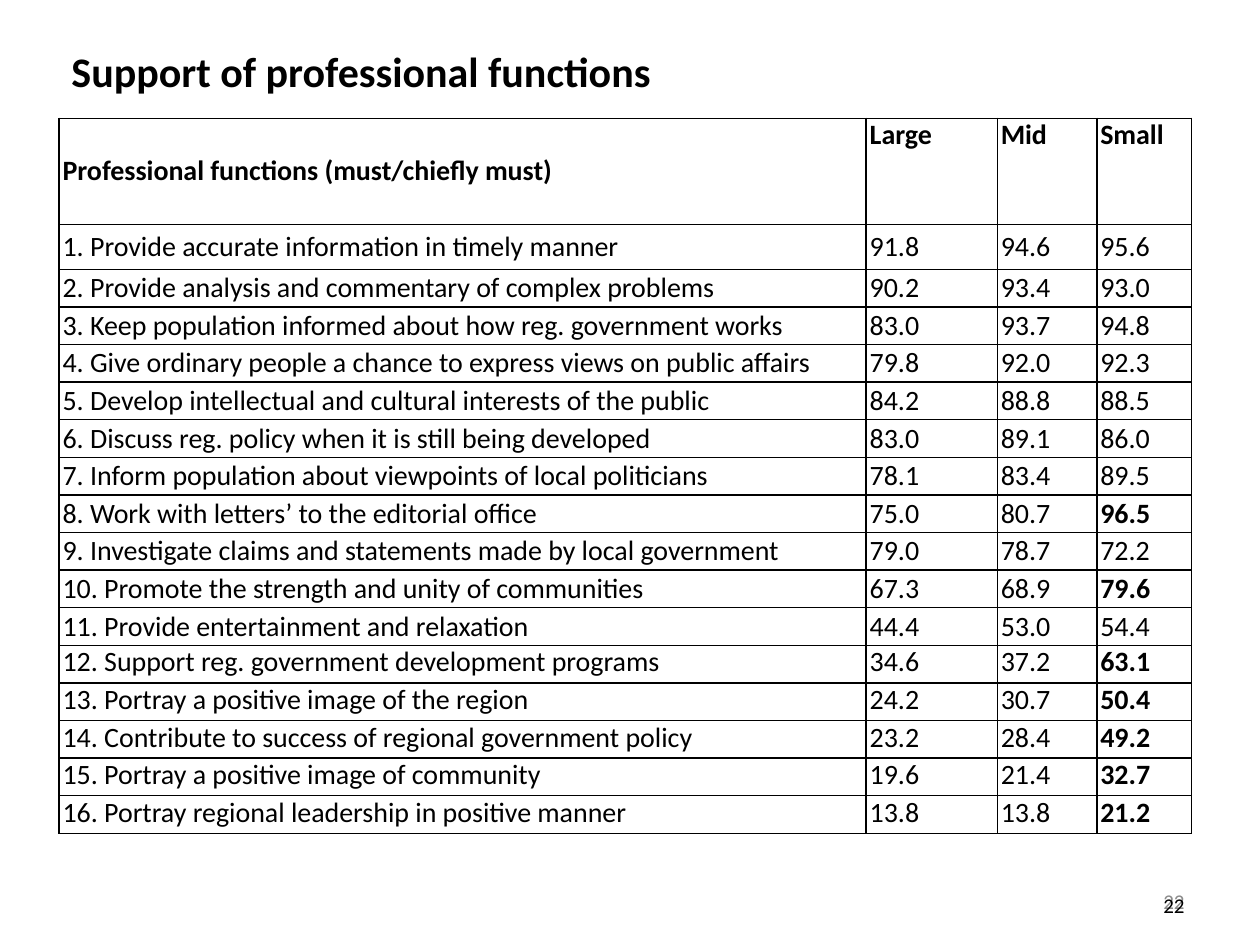
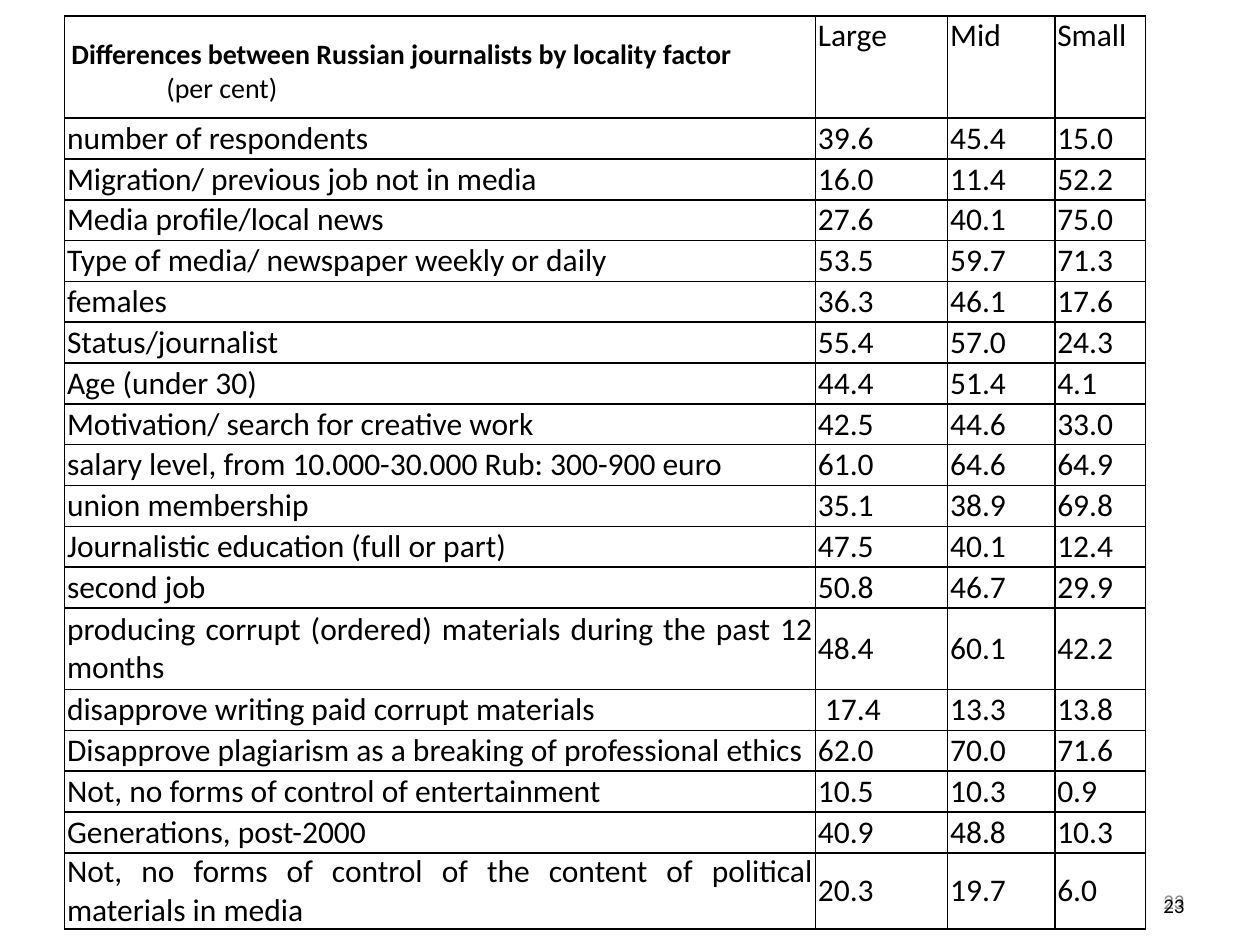
"""Build two slides of tables on Russian journalists by size of locality."""
from lxml import etree
from pptx import Presentation
from pptx.dml.color import RGBColor
from pptx.enum.text import MSO_ANCHOR, PP_ALIGN
from pptx.oxml.ns import qn
from pptx.util import Pt

TOP, MIDDLE, BOTTOM = MSO_ANCHOR.TOP, MSO_ANCHOR.MIDDLE, MSO_ANCHOR.BOTTOM
LEFT, RIGHT, JUSTIFY = PP_ALIGN.LEFT, PP_ALIGN.RIGHT, PP_ALIGN.JUSTIFY
BLACK = RGBColor(0x00, 0x00, 0x00)
GREY = RGBColor(0x8C, 0x8C, 0x8C)
FONT = "Calibri"
BLANK_LAYOUT = 6
BORDER_WIDTH = Pt(1)
BORDER_SIDES = ("a:lnL", "a:lnR", "a:lnT", "a:lnB")

LOCALITIES = ("Large", "Mid", "Small")

FUNCTIONS_TITLE = "Support of professional functions"
FUNCTIONS_HEADER = "Professional functions (must/chiefly must)"
FUNCTIONS = [
    ("Provide accurate information in timely manner", "91.8", "94.6", "95.6"),
    ("Provide analysis and commentary of complex problems", "90.2", "93.4", "93.0"),
    ("Keep population informed about how reg. government works", "83.0", "93.7", "94.8"),
    ("Give ordinary people a chance to express views on public affairs", "79.8", "92.0", "92.3"),
    ("Develop intellectual and cultural interests of the public", "84.2", "88.8", "88.5"),
    ("Discuss reg. policy when it is still being developed", "83.0", "89.1", "86.0"),
    ("Inform population about viewpoints of local politicians", "78.1", "83.4", "89.5"),
    ("Work with letters’ to the editorial office", "75.0", "80.7", "96.5"),
    ("Investigate claims and statements made by local government", "79.0", "78.7", "72.2"),
    ("Promote the strength and unity of communities", "67.3", "68.9", "79.6"),
    ("Provide entertainment and relaxation", "44.4", "53.0", "54.4"),
    ("Support reg. government development programs", "34.6", "37.2", "63.1"),
    ("Portray a positive image of the region", "24.2", "30.7", "50.4"),
    ("Contribute to success of regional government policy", "23.2", "28.4", "49.2"),
    ("Portray a positive image of community", "19.6", "21.4", "32.7"),
    ("Portray regional leadership in positive manner", "13.8", "13.8", "21.2"),
]
STRONG_IN_SMALL = {8, 10, 12, 13, 14, 15, 16}
FIRST_TOP_ALIGNED = 12

DIFFERENCES_TITLE = "Differences between Russian journalists by locality factor"
DIFFERENCES_UNIT = "(per cent)"
DIFFERENCES = [
    ("number of respondents", "39.6", "45.4", "15.0"),
    ("Migration/ previous job not in media", "16.0", "11.4", "52.2"),
    ("Media profile/local news", "27.6", "40.1", "75.0"),
    ("Type of media/ newspaper weekly or daily", "53.5", "59.7", "71.3"),
    ("females", "36.3", "46.1", "17.6"),
    ("Status/journalist", "55.4", "57.0", "24.3"),
    ("Age (under 30)", "44.4", "51.4", "4.1"),
    ("Motivation/ search for creative work", "42.5", "44.6", "33.0"),
    ("salary level, from 10.000-30.000 Rub: 300-900 euro", "61.0", "64.6", "64.9"),
    ("union membership", "35.1", "38.9", "69.8"),
    ("Journalistic education (full or part)", "47.5", "40.1", "12.4"),
    ("second job", "50.8", "46.7", "29.9"),
    ("producing corrupt (ordered) materials during the past 12 months", "48.4", "60.1", "42.2"),
    ("disapprove writing paid corrupt materials", " 17.4", "13.3", "13.8"),
    ("Disapprove plagiarism as a breaking of professional ethics", "62.0", "70.0", "71.6"),
    ("Not, no forms of control of entertainment", "10.5", "10.3", "0.9"),
    ("Generations, post-2000", "40.9", "48.8", "10.3"),
    ("Not, no forms of control of the content of political materials in media",
     "20.3", "19.7", "6.0"),
]


def format_paragraph(paragraph, size, color=BLACK, bold=False, align=LEFT):
    paragraph.alignment = align
    for run in paragraph.runs:
        run.font.name = FONT
        run.font.size = Pt(size)
        run.font.bold = bold
        run.font.color.rgb = color


def add_text(slide, box, lines, anchor=MIDDLE):
    """Add a text box; each line is its text and its paragraph format."""
    shape = slide.shapes.add_textbox(*map(Pt, box))
    frame = shape.text_frame
    frame.word_wrap = True
    frame.vertical_anchor = anchor
    frame.text = "\n".join(text for text, _ in lines)
    for paragraph, (_, style) in zip(frame.paragraphs, lines):
        format_paragraph(paragraph, **style)
    return frame


def add_page_number(slide, number):
    for top, height, color, anchor in ((500.4, 28.8, GREY, MIDDLE), (491.8, 36, BLACK, BOTTOM)):
        style = {"size": 12, "color": color, "align": RIGHT}
        add_text(slide, (516.2, top, 167.8, height), [(str(number), style)], anchor)


def set_borders(cell):
    properties = cell._tc.get_or_add_tcPr()
    for position, side in enumerate(BORDER_SIDES):
        line = etree.Element(qn(side), w=str(BORDER_WIDTH))
        fill = etree.SubElement(line, qn("a:solidFill"))
        etree.SubElement(fill, qn("a:srgbClr"), val=str(BLACK))
        properties.insert(position, line)


def add_table(slide, left, top, widths, heights, rows, size, inset):
    """Add a bordered table whose header values sit at the top."""
    frame = slide.shapes.add_table(len(rows), len(widths), Pt(left), Pt(top),
                                   Pt(sum(widths)), Pt(sum(heights)))
    table = frame.table
    table.first_row = table.horz_banding = False
    for column, width in zip(table.columns, widths):
        column.width = Pt(width)
    for row, height, texts in zip(table.rows, heights, rows):
        row.height = Pt(height)
        for cell, text in zip(row.cells, texts):
            cell.margin_left = cell.margin_right = Pt(inset)
            cell.margin_top = cell.margin_bottom = 0
            cell.vertical_anchor = MIDDLE
            cell.fill.background()
            set_borders(cell)
            cell.text_frame.text = text
            format_paragraph(cell.text_frame.paragraphs[0], size, align=JUSTIFY)
    for cell in list(table.rows[0].cells)[1:]:
        cell.vertical_anchor = TOP
    return table


def build_functions_slide(slide):
    add_page_number(slide, 22)
    rows = [(FUNCTIONS_HEADER, *LOCALITIES)]
    rows += [(f"{number}. {name}", *values)
             for number, (name, *values) in enumerate(FUNCTIONS, 1)]
    heights = [60.6, 25.7] + [21.49] * (len(FUNCTIONS) - 1)
    table = add_table(slide, 33.8, 67.6, (461.2, 74.9, 56.9, 54), heights, rows, 16, 2)
    for cell in table.rows[0].cells:
        format_paragraph(cell.text_frame.paragraphs[0], 16, bold=True, align=JUSTIFY)
    for number in STRONG_IN_SMALL:
        paragraph = table.cell(number, 3).text_frame.paragraphs[0]
        format_paragraph(paragraph, 16, bold=True, align=JUSTIFY)
    for number in range(FIRST_TOP_ALIGNED, len(rows)):
        for cell in table.rows[number].cells:
            cell.vertical_anchor = TOP
    add_text(slide, (33.8, 22.3, 357.1, 36),
             [(FUNCTIONS_TITLE, {"size": 24, "bold": True, "align": JUSTIFY})])


def build_differences_slide(slide):
    add_page_number(slide, 23)
    rows = [("", *LOCALITIES), *DIFFERENCES]
    heights = [58.3] + [23.35] * 12 + [46.6] + [23.35] * 4 + [43.4]
    add_table(slide, 36.9, 9.2, (429.1, 75.6, 61.2, 51.9), heights, rows, 18, 1.4)
    frame = add_text(slide, (33.8, 17.3, 398.2, 46.1),
                     [(DIFFERENCES_TITLE, {"size": 16, "bold": True}),
                      (DIFFERENCES_UNIT, {"size": 16})])
    frame.paragraphs[1]._p.get_or_add_pPr().set("marL", str(Pt(54.2)))


def main():
    presentation = Presentation()
    presentation.slide_width, presentation.slide_height = Pt(720), Pt(540)
    layout = presentation.slide_layouts[BLANK_LAYOUT]
    for build in (build_functions_slide, build_differences_slide):
        build(presentation.slides.add_slide(layout))
    presentation.save("out.pptx")


if __name__ == "__main__":
    main()
